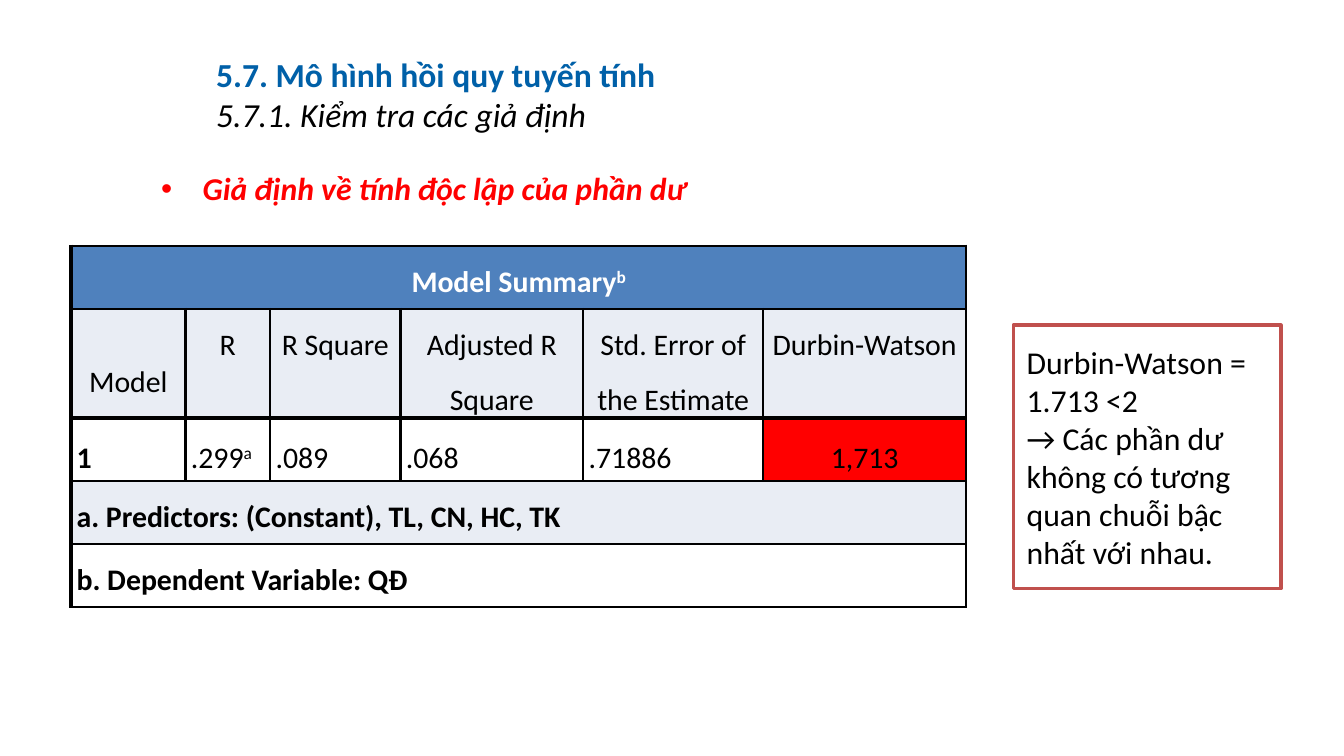
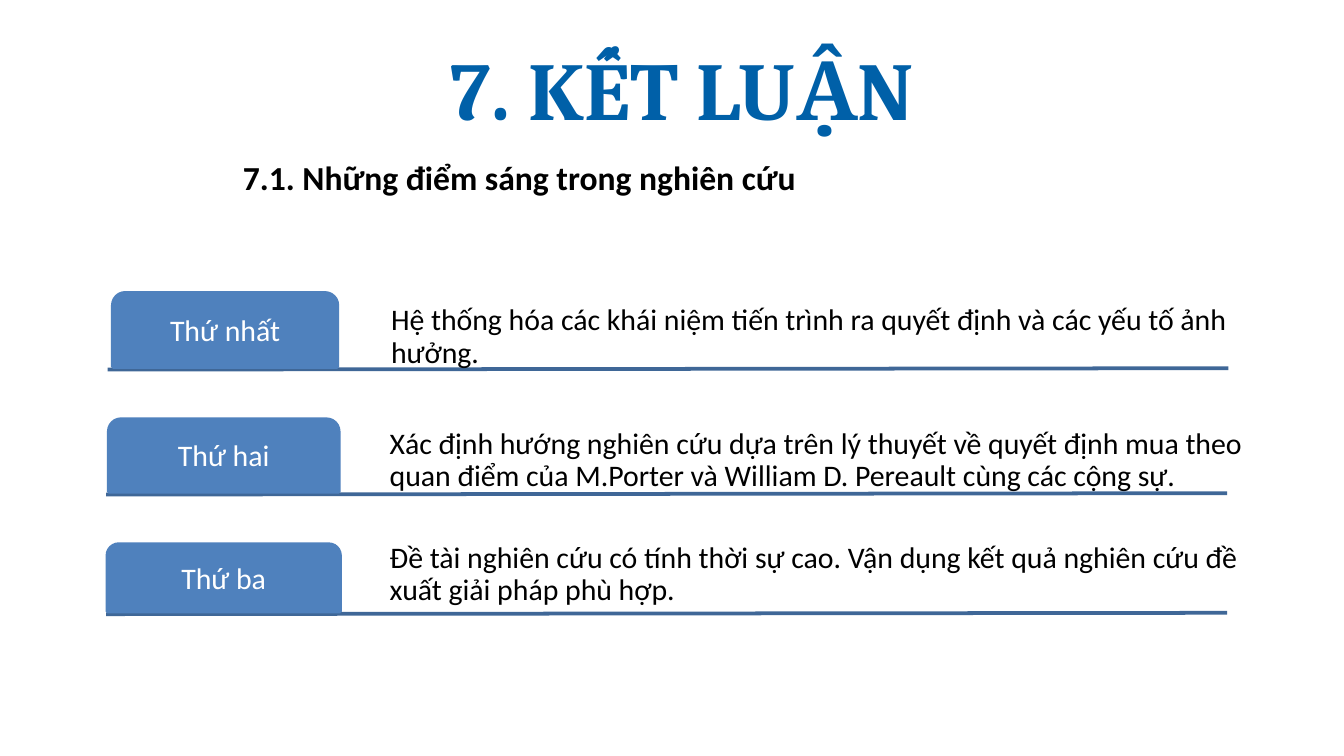
from lxml.etree import SubElement
from pptx import Presentation
from pptx.dml.color import RGBColor
from pptx.enum.shapes import MSO_CONNECTOR, MSO_SHAPE
from pptx.enum.text import MSO_ANCHOR as Anchor, PP_ALIGN as Align
from pptx.oxml import parse_xml
from pptx.oxml.ns import nsdecls, qn
from pptx.util import Emu, Pt

EMU_PER_PX = 9144
BLACK = RGBColor(0x00, 0x00, 0x00)
WHITE = RGBColor(0xFF, 0xFF, 0xFF)
TITLE_BLUE = RGBColor(0x00, 0x60, 0xA8)
ACCENT_BLUE = RGBColor(0x4F, 0x81, 0xBD)
RULE_BLUE = RGBColor(0x3F, 0x67, 0x97)
PALE_BLUE = RGBColor(0xE9, 0xED, 0xF4)
RED = RGBColor(0xFF, 0x00, 0x00)
FRAME_RED = RGBColor(0xC0, 0x50, 0x4D)
BODY_FONT = "Calibri"
TITLE_FONT = "Cambria"

COLUMN_WIDTHS = (85, 63, 97, 136, 134, 151)
ROW_HEIGHTS = (47, 81, 47, 47, 47)
HEADINGS = ("Model", "R", "R Square", "Adjusted R Square",
            "Std. Error of the Estimate", "Durbin-Watson")
VALUES = ("1", ".299^a", ".089", ".068", ".71886", "1,713")
FOOTNOTES = ("a. Predictors: (Constant), TL, CN, HC, TK",
             "b. Dependent Variable: QĐ")
CONCLUSIONS = (
    ("Thứ nhất", "Hệ thống hóa các khái niệm tiến trình ra quyết định và các yếu tố "
     "ảnh hưởng.", (80, 202, 834, 73), 4, 76),
    ("Thứ hai", "Xác định hướng nghiên cứu dựa trên lý thuyết về quyết định mua theo "
     "quan điểm của M.Porter và William D. Pereault cùng các cộng sự.",
     (79, 296, 834, 72), 2, 74),
    ("Thứ ba", "Đề tài nghiên cứu có tính thời sự cao. Vận dụng kết quả nghiên cứu đề "
     "xuất giải pháp phù hợp.", (79, 389, 834, 68), 1, 66),
)


def px(*lengths):
    """Turn whole pixels into EMU lengths."""
    return [Emu(length * EMU_PER_PX) for length in lengths]


def write_text(frame, text, size=16, color=BLACK, font=BODY_FONT, bold=False, italic=False,
               align=Align.LEFT, spacing=None, indent=0, bullet=None, new=False):
    """Write one paragraph, with the part after a caret set as superscript."""
    paragraph = frame.add_paragraph() if new else frame.paragraphs[0]
    properties = paragraph._p.get_or_add_pPr()
    if indent:
        properties.set("marL", str(indent * EMU_PER_PX))
    if bullet:
        properties.set("indent", str(-indent * EMU_PER_PX))
        SubElement(properties, qn("a:buFont"), typeface="Arial")
        SubElement(properties, qn("a:buChar"), char=bullet)
    elif indent:
        properties.set("marR", str(indent * EMU_PER_PX))
    paragraph.alignment = align
    if spacing:
        paragraph.line_spacing = spacing
    for index, part in enumerate(text.split("^")):
        run = paragraph.add_run()
        run.text = part
        run.font.name, run.font.size = font, Pt(size)
        run.font.bold, run.font.italic = bold, italic
        run.font.color.rgb = color
        if index:
            run._r.get_or_add_rPr().set("baseline", "30000")


def set_margins(frame, margin):
    """Give a text frame the same inset on all four sides."""
    frame.margin_left = frame.margin_right = frame.margin_top = frame.margin_bottom = px(margin)[0]


def add_text_box(slide, box, anchor=Anchor.TOP):
    """Add a wrapping text box and return its frame."""
    frame = slide.shapes.add_textbox(*px(*box)).text_frame
    frame.word_wrap = True
    frame.vertical_anchor = anchor
    return frame


def add_box(slide, kind, box, fill, line):
    """Add a filled preset shape with a 2 pt outline."""
    shape = slide.shapes.add_shape(kind, *px(*box))
    shape.shadow.inherit = False
    shape.fill.solid()
    shape.fill.fore_color.rgb = fill
    shape.line.color.rgb = line
    shape.line.width = Pt(2)
    shape.text_frame.word_wrap = True
    shape.text_frame.vertical_anchor = Anchor.MIDDLE
    return shape


def set_borders(cell, widths):
    """Draw black borders on a cell, in the order left, right, top, bottom."""
    properties = cell._tc.get_or_add_tcPr()
    for index, (side, width) in enumerate(zip("LRTB", widths)):
        properties.insert(index, parse_xml(
            f'<a:ln{side} {nsdecls("a")} w="{Pt(width)}"><a:solidFill>'
            f'<a:srgbClr val="{BLACK}"/></a:solidFill></a:ln{side}>'))


def fill_cell(cell, text, fill, anchor=Anchor.TOP, **text_format):
    """Fill one table cell and write its text."""
    set_margins(cell, 0)
    cell.vertical_anchor = anchor
    cell.fill.solid()
    cell.fill.fore_color.rgb = fill
    if text:
        write_text(cell.text_frame, text, spacing=1.5, indent=4, **text_format)


def add_summary_table(slide, box):
    """Add the model summary table."""
    shape = slide.shapes.add_table(len(ROW_HEIGHTS), len(COLUMN_WIDTHS), *px(*box))
    table = shape.table
    table.first_row = table.horz_banding = False
    for column, width in zip(table.columns, px(*COLUMN_WIDTHS)):
        column.width = width
    for row, height in zip(table.rows, px(*ROW_HEIGHTS)):
        row.height = height
    last = len(COLUMN_WIDTHS) - 1
    spans = {0: ("Model Summary^b", ACCENT_BLUE, WHITE, Align.CENTER),
             3: (FOOTNOTES[0], PALE_BLUE, BLACK, Align.JUSTIFY),
             4: (FOOTNOTES[1], WHITE, BLACK, Align.JUSTIFY)}
    for row, (text, fill, color, align) in spans.items():
        table.cell(row, 0).merge(table.cell(row, last))
        for column in range(last + 1):
            fill_cell(table.cell(row, column), "" if column else text, fill,
                      color=color, align=align, bold=True)
    for column, (heading, value) in enumerate(zip(HEADINGS, VALUES)):
        fill_cell(table.cell(1, column), heading, PALE_BLUE, align=Align.CENTER)
        is_result = column == last
        fill_cell(table.cell(2, column), value, RED if is_result else WHITE, Anchor.MIDDLE,
                  align=Align.CENTER if is_result else Align.JUSTIFY, bold=column == 0)
    table.cell(1, 0).margin_top = px(27)[0]
    for row in range(len(ROW_HEIGHTS)):
        for column in range(last + 1):
            inner = row in (1, 2)
            set_borders(table.cell(row, column), (
                2.25 if column == 0 or inner and column == 1 else 1.5,
                2.25 if inner and column == 0 else 1.5,
                2.25 if row == 2 else 1.5, 2.25 if row == 1 else 1.5))


def add_finding(slide, box):
    """Add the framed reading of the Durbin-Watson value."""
    frame = add_box(slide, MSO_SHAPE.RECTANGLE, box, WHITE, FRAME_RED).text_frame
    write_text(frame, "Durbin-Watson = 1.713 <2", size=17)
    write_text(frame, "→ Các phần dư không có tương quan chuỗi bậc nhất với nhau.",
               size=17, new=True)


def add_conclusion(slide, label, text, box, tab_inset, text_height):
    """Add one conclusion: a tab, its text and the rule below them."""
    left, top, width, height = box
    rule = slide.shapes.add_connector(
        MSO_CONNECTOR.STRAIGHT, *px(left, top + height, left + width, top + height - 1))
    rule.line.color.rgb = RULE_BLUE
    rule.line.width = Pt(2)
    SubElement(rule._element.spPr, qn("a:effectLst"))
    frame = add_text_box(slide, (left + 208, top, 646, text_height), Anchor.BOTTOM)
    set_margins(frame, 3)
    write_text(frame, text, spacing=0.9)
    tab_box = (left + tab_inset, top + 16, 175 - 2 * tab_inset, height - 18)
    tab = add_box(slide, MSO_SHAPE.ROUND_2_SAME_RECTANGLE, tab_box, ACCENT_BLUE, ACCENT_BLUE)
    set_margins(tab.text_frame, 3)
    write_text(tab.text_frame, label, color=WHITE, align=Align.CENTER, spacing=0.9)


def build_regression_slide(slide):
    """Build the slide on the independence of residuals."""
    title = add_text_box(slide, (151, 23, 823, 94), Anchor.MIDDLE)
    write_text(title, "5.7. Mô hình hồi quy tuyến tính", size=18, color=TITLE_BLUE, bold=True)
    write_text(title, "5.7.1. Kiểm tra các giả định", size=18, italic=True, new=True)
    add_summary_table(slide, (53, 183, sum(COLUMN_WIDTHS), sum(ROW_HEIGHTS)))
    add_finding(slide, (754, 242, 199, 196))
    write_text(add_text_box(slide, (110, 121, 458, 39)), "Giả định về tính độc lập của phần dư",
               size=17, color=RED, bold=True, italic=True, indent=31, bullet="•")


def build_conclusion_slide(slide):
    """Build the slide with the three conclusions."""
    write_text(add_text_box(slide, (101, 18, 814, 94), Anchor.MIDDLE), "7. KẾT LUẬN", size=44,
               color=TITLE_BLUE, font=TITLE_FONT, bold=True, align=Align.CENTER)
    for conclusion in CONCLUSIONS:
        add_conclusion(slide, *conclusion)
    write_text(add_text_box(slide, (171, 112, 440, 40)),
               "7.1. Những điểm sáng trong nghiên cứu", size=18, bold=True)


def main():
    """Build and save the presentation."""
    presentation = Presentation()
    presentation.slide_width = px(1000)[0]
    presentation.slide_height = Emu(presentation.slide_width * 9 // 16)
    blank = presentation.slide_layouts[6]
    for build in (build_regression_slide, build_conclusion_slide):
        build(presentation.slides.add_slide(blank))
    presentation.save("out.pptx")


if __name__ == "__main__":
    main()
